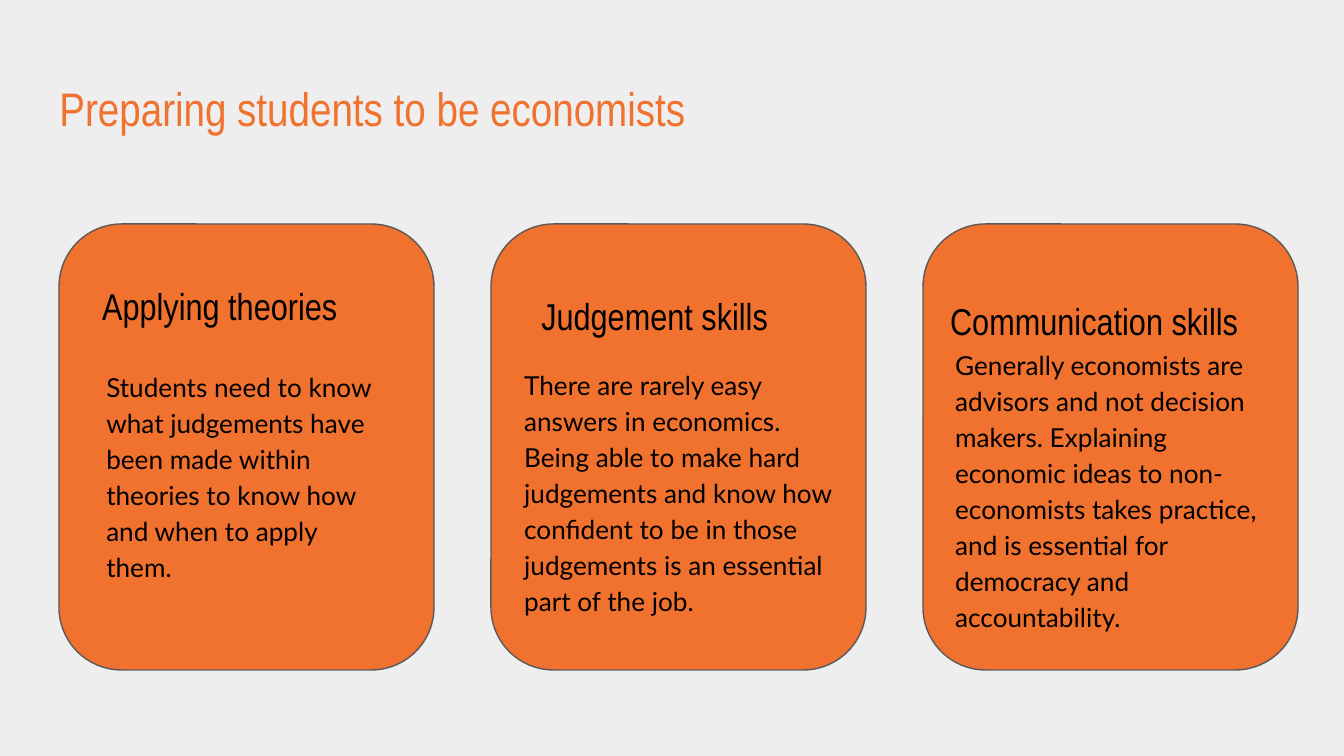
import pptx
import pptx.util
import pptx.dml.color
import pptx.enum.shapes
import pptx.enum.text

TITLE = "Preparing students to be economists"

# Boxes are left, top, width, height in px
CARDS = [
    {
        "head": "Applying theories",
        "head_box": (89, 247, 332, 51),
        "body": "Students need to know what judgements have been made within "
                "theories to know how and when to apply them.",
        "body_box": (93, 353, 308, 204),
    },
    {
        "head": "Judgement skills",
        "head_box": (528, 257, 308, 51),
        "body": "There are rarely easy answers in economics. Being able to make "
                "hard judgements and know how confident to be in those "
                "judgements is an essential part of the job.",
        "body_box": (511, 351, 343, 277),
    },
    {
        "head": "Communication skills",
        "head_box": (937, 262, 343, 51),
        "body": "Generally economists are advisors and not decision makers. "
                "Explaining economic ideas to non-economists takes practice, "
                "and is essential for democracy and accountability.",
        "body_box": (942, 331, 332, 313),
    },
]

COLORS = {"back": "EEEEEE", "orange": "F1712F", "edge": "595959", "ink": "000000"}
SCALE = 914400 / 134.4
LEFT, TOP, WIDE, HIGH, STEP = 59, 224, 375, 446, 432
INSET = pptx.util.Inches(0.1)


def px(num):
    return pptx.util.Emu(round(num * SCALE))


def color(name):
    return pptx.dml.color.RGBColor.from_string(COLORS[name])


def write(shape, text, font, size, tint, space=1.0, after=0):
    frame = shape.text_frame
    frame.text = text
    frame.word_wrap = True
    frame.auto_size = pptx.enum.text.MSO_AUTO_SIZE.NONE
    frame.vertical_anchor = pptx.enum.text.MSO_ANCHOR.TOP
    frame.margin_left = frame.margin_right = INSET
    frame.margin_top = frame.margin_bottom = INSET
    para = frame.paragraphs[0]
    para.alignment = pptx.enum.text.PP_ALIGN.LEFT
    para.line_spacing = space
    para.space_after = pptx.util.Pt(after)
    run = para.runs[0].font
    run.name = font
    run.size = pptx.util.Pt(size)
    run.color.rgb = color(tint)


def add_text(slide, box, *style):
    shape = slide.shapes.add_textbox(*map(px, box))
    write(shape, *style)
    return shape


def add_card(slide, left, card):
    shape = slide.shapes.add_shape(
        pptx.enum.shapes.MSO_SHAPE.ROUNDED_RECTANGLE,
        px(left), px(TOP), px(WIDE), px(HIGH))
    shape.adjustments[0] = 0.167
    shape.shadow.inherit = False
    shape.fill.solid()
    shape.fill.fore_color.rgb = color("orange")
    shape.line.color.rgb = color("edge")
    shape.line.width = pptx.util.Pt(0.75)
    body = add_text(slide, card["body_box"], card["body"], "Lato", 14, "ink", 1.15)
    body.text_frame.auto_size = pptx.enum.text.MSO_AUTO_SIZE.SHAPE_TO_FIT_TEXT
    add_text(slide, card["head_box"], card["head"], "Arial Narrow", 20, "ink", 1.5, 12)


def main():
    deck = pptx.Presentation()
    deck.slide_width, deck.slide_height = px(1344), px(756)
    slide = deck.slides.add_slide(deck.slide_layouts[5])
    back = slide.background.fill
    back.solid()
    back.fore_color.rgb = color("back")

    title = slide.shapes.title
    title.left, title.top, title.width, title.height = map(px, (46, 66, 1252, 84))
    write(title, TITLE, "Arial Narrow", 25.2, "orange")
    title.text_frame.vertical_anchor = pptx.enum.text.MSO_ANCHOR.MIDDLE

    for num, card in enumerate(CARDS):
        add_card(slide, LEFT + num * STEP, card)
    deck.save("out.pptx")


if __name__ == "__main__":
    main()
